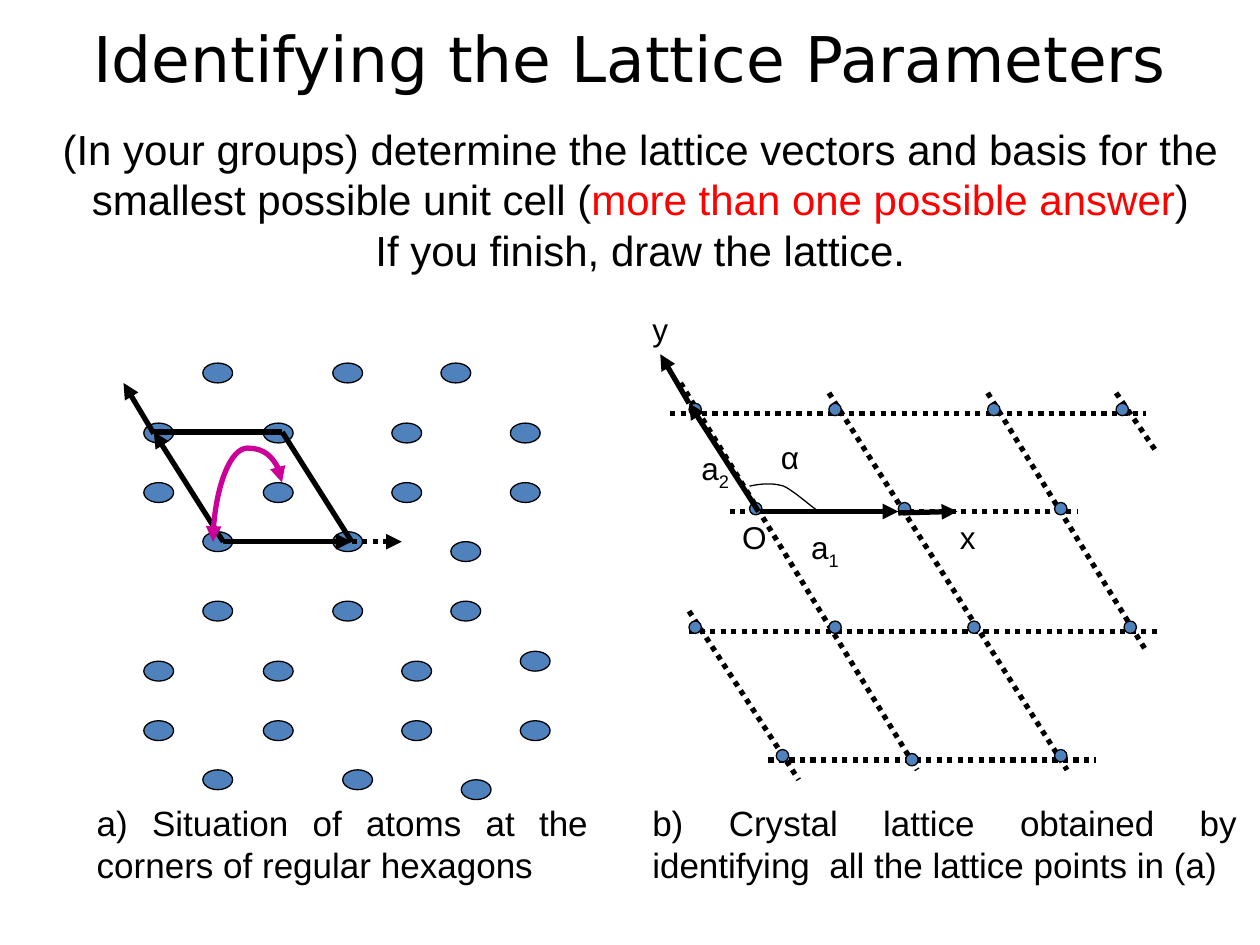
import pptx
import pptx.util
import pptx.dml.color
import pptx.enum.dml
import pptx.enum.shapes
import pptx.enum.text
import pptx.oxml
import pptx.oxml.ns
from pptx.util import Cm

COLORS = {"ink": "000000", "atom": "4F81BD", "hint": "FF0000", "curve": "CC0099"}
ALIGN = pptx.enum.text.PP_ALIGN
ANCHOR = pptx.enum.text.MSO_ANCHOR
CONNECTOR = pptx.enum.shapes.MSO_CONNECTOR


def color(name):
    return pptx.dml.color.RGBColor.from_string(COLORS[name])


def add_run(paragraph, text, size=18, font="Arial", ink="ink", subscript=False):
    run = paragraph.add_run()
    run.text = text
    run.font.size = pptx.util.Pt(size)
    run.font.name = font
    run.font.color.rgb = color(ink)
    if subscript:
        run._r.get_or_add_rPr().set("baseline", "-25000")


def bezier(start, control_1, control_2, end, steps=12):
    """Points along a cubic curve, without its start."""
    for step in range(1, steps + 1):
        t = step / steps
        weights = ((1 - t) ** 3, 3 * t * (1 - t) ** 2, 3 * t * t * (1 - t), t ** 3)
        corners = (start, control_1, control_2, end)
        yield tuple(Cm(sum(w * corner[axis] for w, corner in zip(weights, corners)))
                    for axis in (0, 1))


class LatticeSlide:
    """Holds the drawing style, the slide and the collection being drawn into."""

    thin = pptx.util.Pt(0.75)
    thick = pptx.util.Pt(3)

    def __init__(self, presentation):
        self.slide = presentation.slides.add_slide(presentation.slide_layouts[5])
        self.shapes = self.slide.shapes

    def start_group(self):
        self.shapes = self.slide.shapes.add_group_shape().shapes

    def end_group(self):
        self.shapes = self.slide.shapes

    def title(self, text, left, top, width, height):
        shape = self.slide.shapes.title
        shape.left, shape.top = Cm(left), Cm(top)
        shape.width, shape.height = Cm(width), Cm(height)
        shape.text_frame.vertical_anchor = ANCHOR.MIDDLE
        paragraph = shape.text_frame.paragraphs[0]
        paragraph.alignment = ALIGN.CENTER
        add_run(paragraph, text, size=36, font="DejaVu Sans")

    def text(self, paragraphs, left, top, width, height, size=18,
             align=ALIGN.LEFT, anchor=ANCHOR.TOP, margin_top=0.13):
        """Each paragraph is a list of (text, format) pairs."""
        shape = self.shapes.add_textbox(Cm(left), Cm(top), Cm(width), Cm(height))
        frame = shape.text_frame
        frame.word_wrap = True
        frame.vertical_anchor = anchor
        frame.margin_top = Cm(margin_top)
        for index, runs in enumerate(paragraphs):
            paragraph = frame.add_paragraph() if index else frame.paragraphs[0]
            paragraph.alignment = align
            for text, style in runs:
                add_run(paragraph, text, size=size, **style)

    def dot(self, left, top, width, height):
        shape = self.shapes.add_shape(pptx.enum.shapes.MSO_SHAPE.OVAL,
                                      Cm(left), Cm(top), Cm(width), Cm(height))
        shape.shadow.inherit = False
        shape.fill.solid()
        shape.fill.fore_color.rgb = color("atom")
        shape.line.color.rgb = color("ink")
        shape.line.width = self.thin

    def line(self, x1, y1, x2, y2, ink="ink", dotted=False, arrows=(),
             kind=CONNECTOR.STRAIGHT):
        connector = self.shapes.add_connector(kind, Cm(x1), Cm(y1), Cm(x2), Cm(y2))
        connector.line.color.rgb = color(ink)
        connector.line.width = self.thick
        if dotted:
            connector.line.dash_style = pptx.enum.dml.MSO_LINE.ROUND_DOT
        outline = connector.line._get_or_add_ln()
        for arrow in arrows:
            end = pptx.oxml.parse_xml(
                f'<a:{arrow} {pptx.oxml.ns.nsdecls("a")} type="triangle"/>')
            outline.append(end)
        connector._element.spPr.append(
            pptx.oxml.parse_xml(f'<a:effectLst {pptx.oxml.ns.nsdecls("a")}/>'))
        return connector

    def curved_arrow(self, x1, y1, x2, y2, rotation, bend, ink):
        connector = self.line(x1, y1, x2, y2, ink=ink, arrows=("headEnd", "tailEnd"),
                              kind=CONNECTOR.CURVE)
        properties = connector._element.spPr
        properties.find(pptx.oxml.ns.qn("a:xfrm")).set("rot", str(rotation * 60000))
        adjustments = properties.find(".//" + pptx.oxml.ns.qn("a:avLst"))
        adjustments.append(pptx.oxml.parse_xml(
            f'<a:gd {pptx.oxml.ns.nsdecls("a")} name="adj1" fmla="val {bend}"/>'))

    def arc(self, start, *curves):
        builder = self.shapes.build_freeform(Cm(start[0]), Cm(start[1]))
        for curve in curves:
            builder.add_line_segments(list(bezier(start, *curve)), close=False)
            start = curve[-1]
        shape = builder.convert_to_shape()
        shape.shadow.inherit = False
        shape.fill.background()
        shape.line.color.rgb = color("ink")
        shape.line.width = self.thin


# Row top -> left edges, in cm
ATOM_ROWS = {
    7.32: (4.09, 6.71, 8.89),
    8.53: (2.9, 5.31, 7.9, 10.29),
    9.73: (2.9, 5.31, 7.9, 10.29),
    10.72: (4.09, 6.71),
    10.92: (9.09,),
    12.12: (4.09, 6.71, 9.09),
    13.13: (10.49,),
    13.33: (2.9, 5.31, 8.1),
    14.53: (2.9, 5.31, 8.1, 10.49),
    15.52: (4.09, 6.91),
    15.72: (9.3,),
}
POINT_ROWS = {
    8.13: (13.89, 16.71, 19.91, 22.5),
    10.13: (15.11, 18.11, 21.26),
    12.52: (13.89, 16.71, 19.51, 22.66),
    15.11: (15.65, 21.26),
    15.19: (18.26,),
}
LATTICE_LINES = (
    (13.72, 7.72, 18.49, 15.52), (19.91, 7.92, 23.11, 13.13),
    (13.51, 8.33, 23.11, 8.33), (14.71, 10.31, 21.72, 10.31),
    (13.89, 12.73, 23.32, 12.73), (15.49, 15.32, 22.1, 15.32),
    (13.89, 12.32, 16.1, 15.72), (16.71, 7.92, 21.51, 15.52),
    (22.5, 7.92, 23.32, 9.12),
)
LATTICE_VECTORS = (
    (15.29, 10.31, 13.89, 8.13), (15.32, 10.31, 18.11, 10.31),
    (13.89, 8.13, 13.31, 7.14), (18.11, 10.34, 19.3, 10.31),
)
# Letter, subscript, left, top
LABELS = (
    ("α", "", 15.49, 8.71), ("a", "1", 16.1, 10.52), ("a", "2", 13.89, 8.92),
    ("O", "", 14.71, 10.31), ("y", "", 12.9, 6.12), ("x", "", 19.1, 10.31),
)
CAPTIONS = (
    ("b) Crystal lattice obtained by identifying  all the lattice points in (a)",
     12.9, 12.29),
    ("a) Situation of atoms at the corners of regular hexagons", 1.7, 10.41),
)


def main():
    presentation = pptx.Presentation()
    presentation.slide_width, presentation.slide_height = Cm(25.4), Cm(19.05)
    page = LatticeSlide(presentation)
    tail = ("tailEnd",)

    # Title and task
    page.title("Identifying the Lattice Parameters", 1.27, -0.43, 22.86, 3.18)
    page.text([[("(In your groups) determine the lattice vectors and basis for the "
                 "smallest possible unit cell (", {}),
                ("more than one possible answer", {"ink": "hint"}), (")", {})],
               [("If you finish, draw the lattice.", {})]],
              0.64, 1.35, 24.54, 4.37, size=24, align=ALIGN.CENTER, margin_top=1.14)

    # Atoms with the unit cell
    for top, lefts in ATOM_ROWS.items():
        for left in lefts:
            page.dot(left, top, 0.6, 0.4)
    page.line(4.5, 10.92, 3.1, 8.71, arrows=tail)
    page.line(4.5, 10.92, 7.09, 10.92, arrows=tail)
    page.line(5.69, 8.71, 7.09, 10.92)
    page.line(3.1, 8.71, 5.69, 8.71)
    page.line(7.09, 10.92, 8.1, 10.92, dotted=True, arrows=tail)
    page.line(3.1, 8.74, 2.49, 7.72, arrows=tail)

    # Crystal lattice
    page.start_group()
    for ends in LATTICE_LINES:
        page.line(*ends, dotted=True)
    for top, lefts in POINT_ROWS.items():
        for left in lefts:
            page.dot(left, top, 0.25, 0.25)
    for ends in LATTICE_VECTORS:
        page.line(*ends, arrows=tail)
    page.arc((15.11, 9.8), ((15.34, 9.75), (15.57, 9.73), (15.8, 9.8)),
             ((16.03, 9.91), (16.38, 10.24), (16.51, 10.31)))
    for letter, index, left, top in LABELS:
        runs = [(letter, {})] + ([(index, {"subscript": True})] if index else [])
        page.text([runs], left, top, 3, 1.02)
    page.end_group()

    # Captions and the arrow between the two basis atoms
    for caption, left, width in CAPTIONS:
        page.text([[(caption, {})]], left, 15.93, width, 2.16, size=20,
                  align=ALIGN.JUSTIFY, anchor=ANCHOR.MIDDLE)
    page.curved_arrow(4.39, 9.63, 5.59, 11.02, rotation=270, bend=157700, ink="curve")

    presentation.save("out.pptx")


if __name__ == "__main__":
    main()
